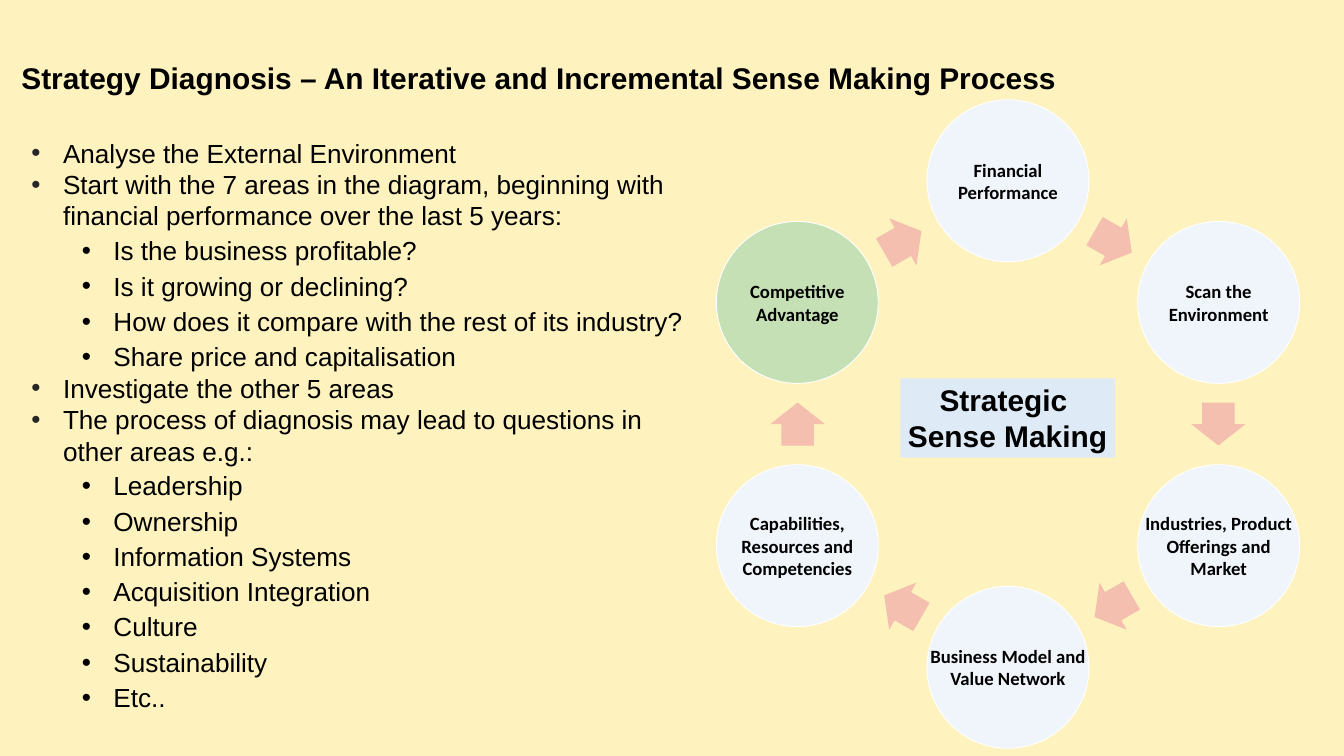
from math import cos, radians, sin
from typing import NamedTuple

from lxml.etree import SubElement as Sub
from pptx import Presentation
from pptx.dml.color import RGBColor
from pptx.enum.shapes import MSO_SHAPE as Kind
from pptx.enum.text import MSO_ANCHOR as Anchor, MSO_AUTO_SIZE as Fit, PP_ALIGN as Align
from pptx.oxml.ns import qn
from pptx.util import Inches, Pt

HUES = {
    "back": "FEF2BE", "text": "000000", "bullet": "272727", "disc": "EFF5FB",
    "goal": "C5E0B4", "arrow": "F4BFAE", "hub": "DEEBF7", "edge": "FFFFFF",
}
HUB_X, HUB_Y = 15.0, 6.31
DISC, DISC_R = 2.41, 3.62
ARROW_W, ARROW_H, ARROW_R = 0.64, 0.81, 3.13


class Point(NamedTuple):
    text: str
    level: int = 0


class Stage(NamedTuple):
    name: str
    hue: str = "disc"


class Box(NamedTuple):
    x: float
    y: float
    w: float
    h: float


POINTS = [
    Point("Analyse the External Environment"),
    Point("Start with the 7 areas in the diagram, beginning with financial "
          "performance over the last 5 years:"),
    Point("Is the business profitable?", 1),
    Point("Is it growing or declining?", 1),
    Point("How does it compare with the rest of its industry?", 1),
    Point("Share price and capitalisation", 1),
    Point("Investigate the other 5 areas"),
    Point("The process of diagnosis may lead to questions in other areas e.g.:"),
    Point("Leadership", 1),
    Point("Ownership", 1),
    Point("Information Systems", 1),
    Point("Acquisition Integration", 1),
    Point("Culture", 1),
    Point("Sustainability", 1),
    Point("Etc..", 1),
]
STAGES = [
    Stage("Financial Performance"),
    Stage("Scan the Environment"),
    Stage("Industries, Product Offerings and Market"),
    Stage("Business Model and Value Network"),
    Stage("Capabilities, Resources and Competencies"),
    Stage("Competitive Advantage", "goal"),
]


def color(name: str) -> RGBColor:
    return RGBColor.from_string(HUES[name])


def place(box: Box) -> list:
    return [Inches(side) for side in box]


def orbit(angle: float, reach: float, w: float, h: float) -> Box:
    """Box of size w by h centred on the ring, angle clockwise from the top."""
    turn = radians(angle)
    return Box(HUB_X + reach * sin(turn) - w / 2, HUB_Y - reach * cos(turn) - h / 2, w, h)


def style(para, size: float, face: str = "Arial", bold: bool = True) -> None:
    font = para.font
    font.size, font.name, font.bold = Pt(size), face, bold
    font.color.rgb = color("text")


def add_text(slide, box: Box):
    frame = slide.shapes.add_textbox(*place(box)).text_frame
    frame.word_wrap = True
    return frame


def add_form(slide, kind: Kind, box: Box, hue: str):
    form = slide.shapes.add_shape(kind, *place(box))
    form.shadow.inherit = False
    form.fill.solid()
    form.fill.fore_color.rgb = color(hue)
    form.line.fill.background()
    return form


def add_title(slide) -> None:
    frame = add_text(slide, Box(0.22, 0.85, 17.84, 0.62))
    frame.vertical_anchor = Anchor.BOTTOM
    para = frame.paragraphs[0]
    para.text = "Strategy Diagnosis – An Iterative and Incremental Sense Making Process"
    para.line_spacing = 0.9
    style(para, 32)


def add_points(slide) -> None:
    frame = add_text(slide, Box(0.37, 1.99, 10.07, 8.98))
    for i, point in enumerate(POINTS):
        para = frame.add_paragraph() if i else frame.paragraphs[0]
        para.text, para.level = point.text, point.level
        if point.level:
            para.line_spacing, para.space_before = 0.9, Pt(7.5)
        props = para._p.get_or_add_pPr()
        props.set("marL", str(Inches(0.47 + 0.75 * point.level)))
        props.set("indent", str(Inches(-0.47)))
        if not point.level:
            tint = Sub(props, qn("a:buClr"))
            Sub(tint, qn("a:srgbClr"), val=HUES["bullet"])
        Sub(props, qn("a:buFont"), typeface="Arial")
        Sub(props, qn("a:buChar"), char="•")
        style(para, 28, bold=False)


def add_stage(slide, stage: Stage, angle: float) -> None:
    box = orbit(angle, DISC_R, DISC, DISC)
    disc = add_form(slide, Kind.OVAL, box, stage.hue)
    disc.line.color.rgb = color("edge")
    disc.line.width = Pt(1)
    frame = add_text(slide, box)
    frame.vertical_anchor = Anchor.MIDDLE
    frame.margin_left = frame.margin_right = Inches(0.03)
    frame.margin_top = frame.margin_bottom = Inches(0.03)
    para = frame.paragraphs[0]
    para.text, para.alignment = stage.name, Align.CENTER
    style(para, 20, "Calibri")


def add_arrow(slide, angle: float) -> None:
    box = orbit(angle, ARROW_R, ARROW_W, ARROW_H)
    arrow = add_form(slide, Kind.RIGHT_ARROW, box, "arrow")
    arrow.adjustments[0], arrow.adjustments[1] = 0.6, 0.5
    arrow.rotation = angle


def add_hub(slide) -> None:
    hub = add_form(slide, Kind.RECTANGLE, Box(13.4, 5.63, 3.19, 1.18), "hub")
    frame = hub.text_frame
    frame.word_wrap, frame.auto_size = False, Fit.SHAPE_TO_FIT_TEXT
    frame.vertical_anchor = Anchor.TOP
    frame.text = "Strategic \nSense Making"
    for para in frame.paragraphs:
        para.alignment = Align.CENTER
        style(para, 32)


def main() -> None:
    deck = Presentation()
    deck.slide_width, deck.slide_height = Inches(20), Inches(11.25)
    slide = deck.slides.add_slide(deck.slide_layouts[6])
    slide.background.fill.solid()
    slide.background.fill.fore_color.rgb = color("back")
    add_title(slide)
    add_points(slide)
    step = 360 / len(STAGES)
    for i, stage in enumerate(STAGES):
        add_stage(slide, stage, i * step)
        add_arrow(slide, (i + 0.5) * step)
    add_hub(slide)
    deck.save("out.pptx")


if __name__ == "__main__":
    main()
